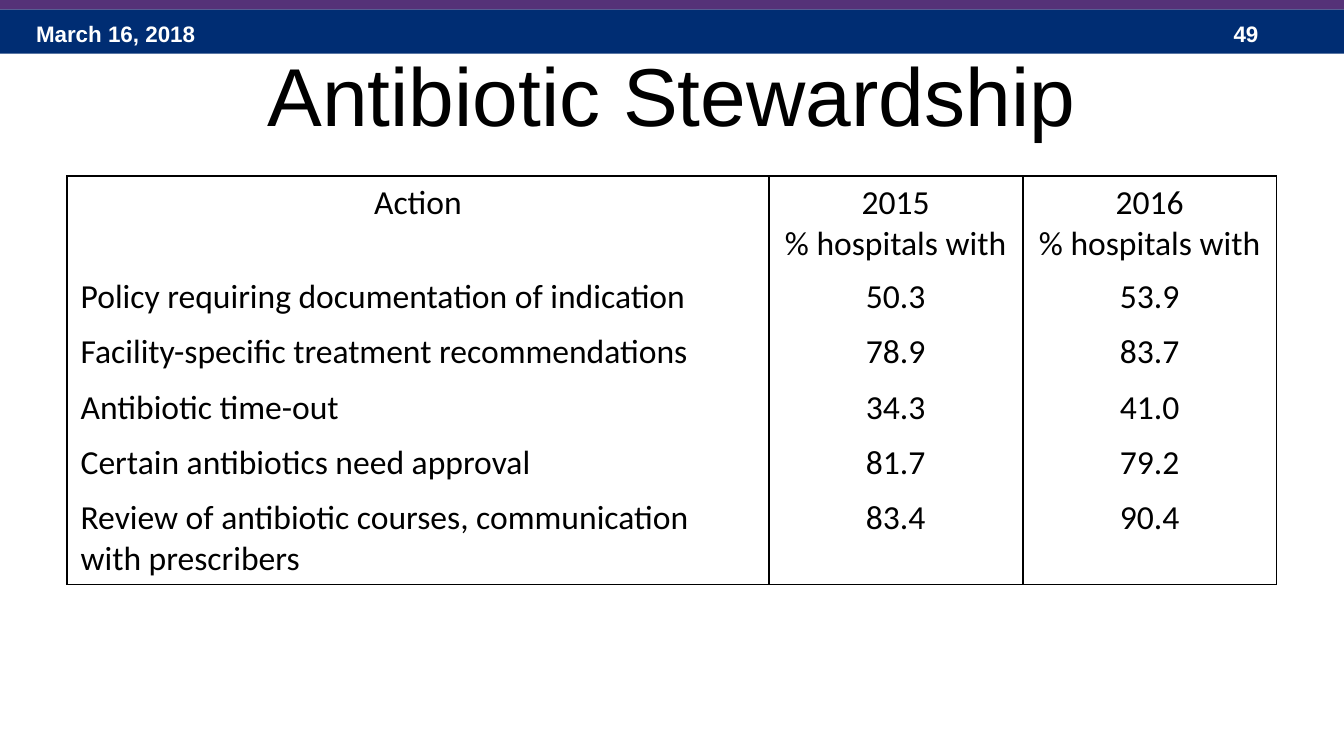
from lxml import etree
from pptx import Presentation
from pptx.dml.color import RGBColor
from pptx.enum import shapes, text
from pptx.oxml.ns import qn
from pptx.util import Inches, Pt

BLACK, WHITE, NAVY, PURPLE = "000000", "FFFFFF", "002D73", "553278"
COLUMN_WIDTHS = (5.22, 1.89, 1.89)
ROW_HEIGHT = 0.41
ROWS = [
    ("Action", "2015\n% hospitals with", "2016\n% hospitals with"),
    ("Policy requiring documentation of indication", "50.3", "53.9"),
    ("Facility-specific treatment recommendations", "78.9", "83.7"),
    ("Antibiotic time-out", "34.3", "41.0"),
    ("Certain antibiotics need approval", "81.7", "79.2"),
    ("Review of antibiotic courses, communication with prescribers", "83.4", "90.4"),
]


def color(value):
    return RGBColor.from_string(value)


def add_span(para, words, size, font, ink, bold=False):
    span = para.add_run()
    span.text = words
    span.font.size = Pt(size)
    span.font.name = font
    span.font.bold = bold
    span.font.color.rgb = color(ink)


def add_band(slide, top, height, fill):
    band = slide.shapes.add_shape(
        shapes.MSO_SHAPE.RECTANGLE, 0, Inches(top), Inches(10), Inches(height))
    band.shadow.inherit = False
    band.fill.solid()
    band.fill.fore_color.rgb = color(fill)
    band.line.fill.background()


def add_label(slide, left, width, words):
    box = slide.shapes.add_textbox(
        Inches(left), Inches(0.1), Inches(width), Inches(0.3))
    frame = box.text_frame
    frame.word_wrap = True
    add_span(frame.paragraphs[0], words, 12, "Arial", WHITE, bold=True)


def set_title(slide, words):
    title = slide.shapes.title
    title.left, title.top = Inches(0.5), Inches(0.23)
    title.width, title.height = Inches(9), Inches(0.94)
    title.text_frame.vertical_anchor = text.MSO_ANCHOR.MIDDLE
    para = title.text_frame.paragraphs[0]
    para.alignment = text.PP_ALIGN.CENTER
    add_span(para, words, 44, "Arial", BLACK)


def set_borders(cell, drawn_sides):
    properties = cell._tc.get_or_add_tcPr()
    for side in "LRTB":
        line = etree.SubElement(properties, qn(f"a:ln{side}"), w=str(Pt(1)))
        if side in drawn_sides:
            fill = etree.SubElement(line, qn("a:solidFill"))
            etree.SubElement(fill, qn("a:srgbClr"), val=BLACK)
        else:
            etree.SubElement(line, qn("a:noFill"))


def fill_cell(cell, words, centered):
    cell.fill.background()
    frame = cell.text_frame
    for index, line in enumerate(words.split("\n")):
        para = frame.add_paragraph() if index else frame.paragraphs[0]
        para.alignment = text.PP_ALIGN.CENTER if centered else text.PP_ALIGN.LEFT
        add_span(para, line, 18, "Calibri", BLACK)


def add_action_table(slide):
    table = slide.shapes.add_table(
        len(ROWS), len(COLUMN_WIDTHS), Inches(0.5), Inches(1.31),
        Inches(sum(COLUMN_WIDTHS)), Inches(ROW_HEIGHT * len(ROWS))).table
    table.first_row = table.horz_banding = False
    for column, width in zip(table.columns, COLUMN_WIDTHS):
        column.width = Inches(width)
    last = len(ROWS) - 1
    for r, row in enumerate(ROWS):
        table.rows[r].height = Inches(ROW_HEIGHT)
        # Vertical rules everywhere, horizontal ones only on the outer edge
        sides = "LR" + ("T" if r == 0 else "") + ("B" if r == last else "")
        for c, words in enumerate(row):
            cell = table.cell(r, c)
            set_borders(cell, sides)
            fill_cell(cell, words, centered=r == 0 or c > 0)


def main():
    deck = Presentation()
    # Widescreen, 16:9
    deck.slide_width = Inches(10)
    deck.slide_height = Inches(10 * 9 / 16)
    slide = deck.slides.add_slide(deck.slide_layouts[5])

    # Header bands with date and page number
    add_band(slide, 0.07, 0.33, NAVY)
    add_label(slide, 0.17, 2.33, "March 16, 2018")
    add_label(slide, 9.08, 0.75, "49")
    add_band(slide, -0.02, 0.09, PURPLE)

    # Title and table
    set_title(slide, "Antibiotic Stewardship")
    add_action_table(slide)
    deck.save("out.pptx")


if __name__ == "__main__":
    main()
